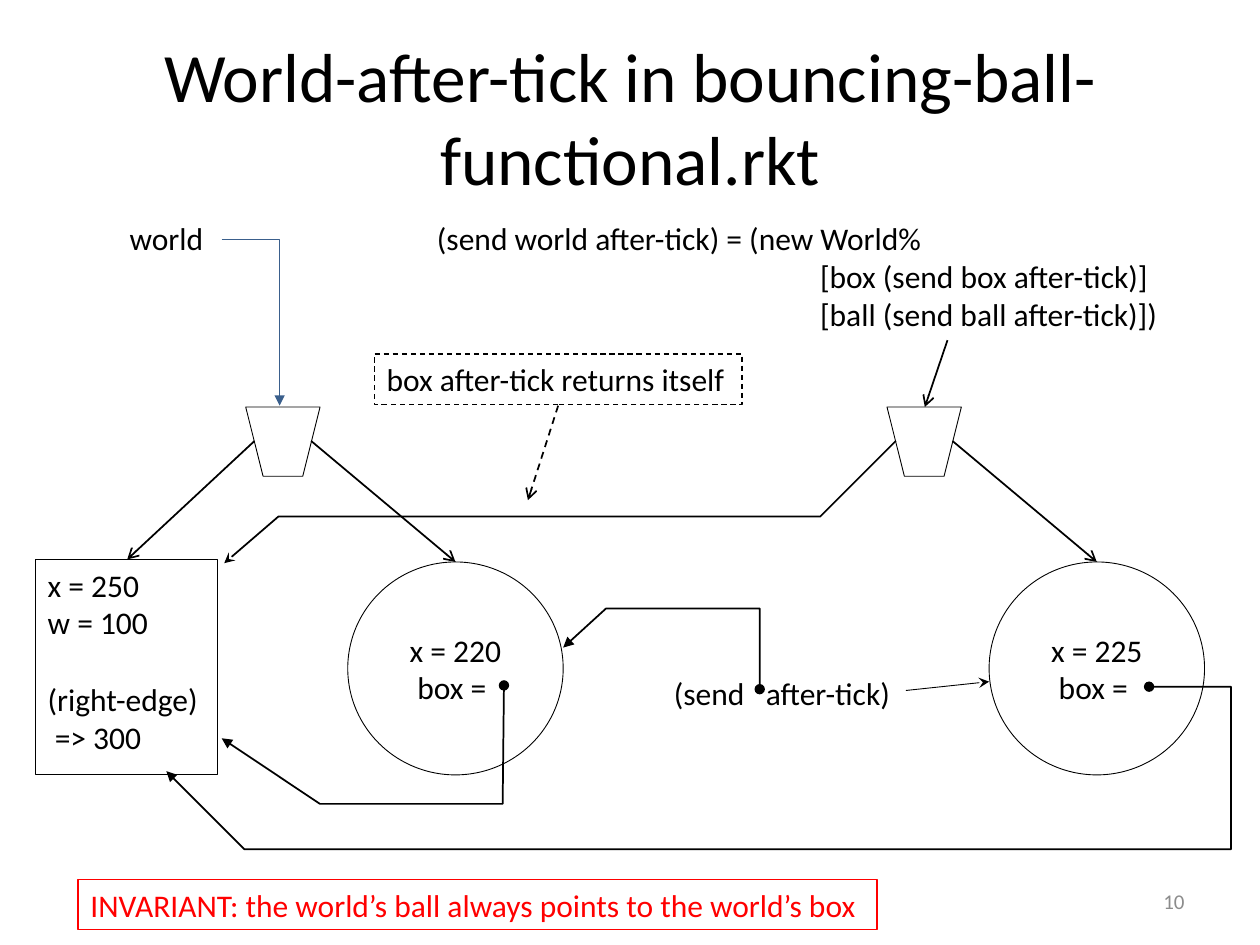
from dataclasses import dataclass

from lxml import etree
from pptx import Presentation
from pptx import util as u
from pptx.dml.color import RGBColor
from pptx.enum import dml, shapes, text
from pptx.oxml import ns


@dataclass(frozen=True)
class Theme:
    font: str = "Calibri"
    ink: str = "000000"
    alert: str = "FF0000"
    pointer: str = "3A5F8C"
    muted: str = "8C8C8C"
    title: float = 39.6
    body: float = 18
    number: float = 12


THEME = Theme()
DASH = dml.MSO_LINE.DASH
ALIGN = text.PP_ALIGN
ANCHOR = text.MSO_ANCHOR


def inches(*values):
    return [u.Inches(value) for value in values]


def write(frame, lines, size=THEME.body, color=THEME.ink, align=ALIGN.LEFT, anchor=ANCHOR.TOP):
    frame.word_wrap = True
    frame.vertical_anchor = anchor
    frame.text = "\n".join(lines)
    for paragraph in frame.paragraphs:
        paragraph.alignment = align
        paragraph.font.name = THEME.font
        paragraph.font.size = u.Pt(size)
        paragraph.font.color.rgb = RGBColor.from_string(color)
    return frame.paragraphs


def stroke(line, width, color=THEME.ink, dash=None):
    line.color.rgb = RGBColor.from_string(color)
    line.width = u.Pt(width)
    if dash:
        line.dash_style = dash


def add_label(slide, box, lines, **style):
    label = slide.shapes.add_textbox(*inches(*box))
    return write(label.text_frame, lines, **style)


def add_outline(slide, kind, box, width=0.5, color=THEME.ink, dash=None):
    outline = slide.shapes.add_shape(kind, *inches(*box))
    outline.shadow.inherit = False
    outline.fill.background()
    stroke(outline.line, width, color, dash)
    return outline


def add_arrow(slide, points, tail="arrow", head=None, width=1, color=THEME.ink, dash=None):
    points = [inches(*point) for point in points]
    if len(points) == 2:
        arrow = slide.shapes.add_connector(shapes.MSO_CONNECTOR.STRAIGHT, *points[0], *points[1])
    else:
        builder = slide.shapes.build_freeform(*points[0], scale=1.0)
        builder.add_line_segments(points[1:], close=False)
        arrow = builder.convert_to_shape()
        arrow.fill.background()
    stroke(arrow.line, width, color, dash)
    outline = arrow.line._get_or_add_ln()
    for tag, end in (("a:headEnd", head), ("a:tailEnd", tail)):
        if end:
            etree.SubElement(outline, ns.qn(tag), type=end)
    etree.SubElement(arrow._element.spPr, ns.qn("a:effectLst"))


def draw_title(slide, box):
    title = slide.shapes.title
    title.left, title.top, title.width, title.height = inches(*box)
    write(title.text_frame, ["World-after-tick in bouncing-ball-functional.rkt"],
          size=THEME.title, align=ALIGN.CENTER, anchor=ANCHOR.MIDDLE)


def draw_world(slide, box, ball_x):
    left, top, width, height = box
    node = add_outline(slide, shapes.MSO_SHAPE.TRAPEZOID, (left, top, 0.59, 0.55))
    node.rotation = 180
    ball_width, ball_height = 1.71, 1.69
    ball_left, ball_top = left + width - ball_width, top + height - ball_height
    ball = add_outline(slide, shapes.MSO_SHAPE.OVAL,
                       (ball_left, ball_top, ball_width, ball_height))
    write(ball.text_frame, [f"x = {ball_x}", "box = "], align=ALIGN.CENTER, anchor=ANCHOR.MIDDLE)
    add_arrow(slide, [(left + 0.52, top + 0.27), (ball_left + ball_width / 2, ball_top)])


def draw_wall(slide, box):
    wall = add_outline(slide, shapes.MSO_SHAPE.RECTANGLE, box)
    lines = write(wall.text_frame, ["x = 250", "w = 100", "(right-edge)", " => 300"])
    lines[2].space_before = u.Pt(22)


def draw_expressions(slide, box):
    left, top, width, height = box
    add_label(slide, (left, top, 0.9, 0.4), ["world"])
    code = add_label(slide, (left + 2.44, top, width - 2.44, height),
                     ["(send world after-tick) = (new World%",
                      "[box (send box after-tick)]",
                      "[ball (send ball after-tick)])"])
    for line in code[1:]:
        line._p.get_or_add_pPr().set("marL", str(u.Inches(3.04)))


def draw_ball_message(slide, box):
    message = add_label(slide, box, ["(send\tafter-tick)"])[0]
    properties = message._p.get_or_add_pPr()
    stops = etree.Element(ns.qn("a:tabLst"))
    etree.SubElement(stops, ns.qn("a:tab"), pos=str(u.Inches(0.73)), algn="l")
    properties.find(ns.qn("a:defRPr")).addprevious(stops)


def draw_note(slide, box, note, color=THEME.ink, dash=None):
    frame = add_outline(slide, shapes.MSO_SHAPE.RECTANGLE, box, 0.75, color, dash)
    write(frame.text_frame, [note], color=color)


def draw_references(slide, box):
    left, top = box[:2]

    def link(*points, **style):
        add_arrow(slide, [(left + x, top + y) for x, y in points], **style)

    link((0.44, 0), (0.9, 0), (0.9, 1.32), tail="triangle", color=THEME.pointer)
    link((0.7, 1.6), (-0.31, 2.54))
    link((6.2, 0.8), (6.02, 1.33))
    link((3.11, 1.32), (2.87, 2.07), dash=DASH)
    link((5.79, 1.6), (5.19, 2.2), (0.89, 2.2), (0.46, 2.57), tail="stealth")
    link((5.87, 3.58), (6.53, 3.51), tail="stealth", width=0.5)
    link((2.68, 3.54), (2.67, 4.48), (1.22, 4.48), (0.44, 3.96), head="oval", tail="triangle")
    link((7.8, 3.55), (8.45, 3.55), (8.45, 4.84), (0.62, 4.84), (0, 4.22),
         head="oval", tail="triangle")
    link((4.71, 3.57), (4.71, 2.93), (3.49, 2.93), (3.15, 3.24), head="oval", tail="triangle")


def draw_number(slide, box):
    add_label(slide, box, ["10"], size=THEME.number, color=THEME.muted,
              align=ALIGN.RIGHT, anchor=ANCHOR.MIDDLE)


def main():
    deck = Presentation()
    deck.slide_width, deck.slide_height = inches(10, 7.5)
    slide = deck.slides.add_slide(deck.slide_layouts.get_by_name("Title Only"))
    draw_title(slide, (0.5, 0.3, 9, 1.25))
    for left, ball_x in ((1.95, 220), (7.04, 225)):
        draw_world(slide, (left, 3.23, 2.52, 2.92), ball_x)
    draw_wall(slide, (0.28, 4.44, 1.45, 1.71))
    draw_expressions(slide, (0.93, 1.69, 8.77, 1.01))
    draw_ball_message(slide, (5.25, 5.3, 1.95, 0.4))
    draw_note(slide, (2.97, 2.81, 2.92, 0.4), "box after-tick returns itself", dash=DASH)
    draw_note(slide, (0.62, 6.98, 6.34, 0.4),
              "INVARIANT: the world’s ball always points to the world’s box", color=THEME.alert)
    draw_references(slide, (1.32, 1.9, 8.45, 4.84))
    draw_number(slide, (7.17, 6.95, 2.33, 0.4))
    deck.save("out.pptx")


if __name__ == "__main__":
    main()
